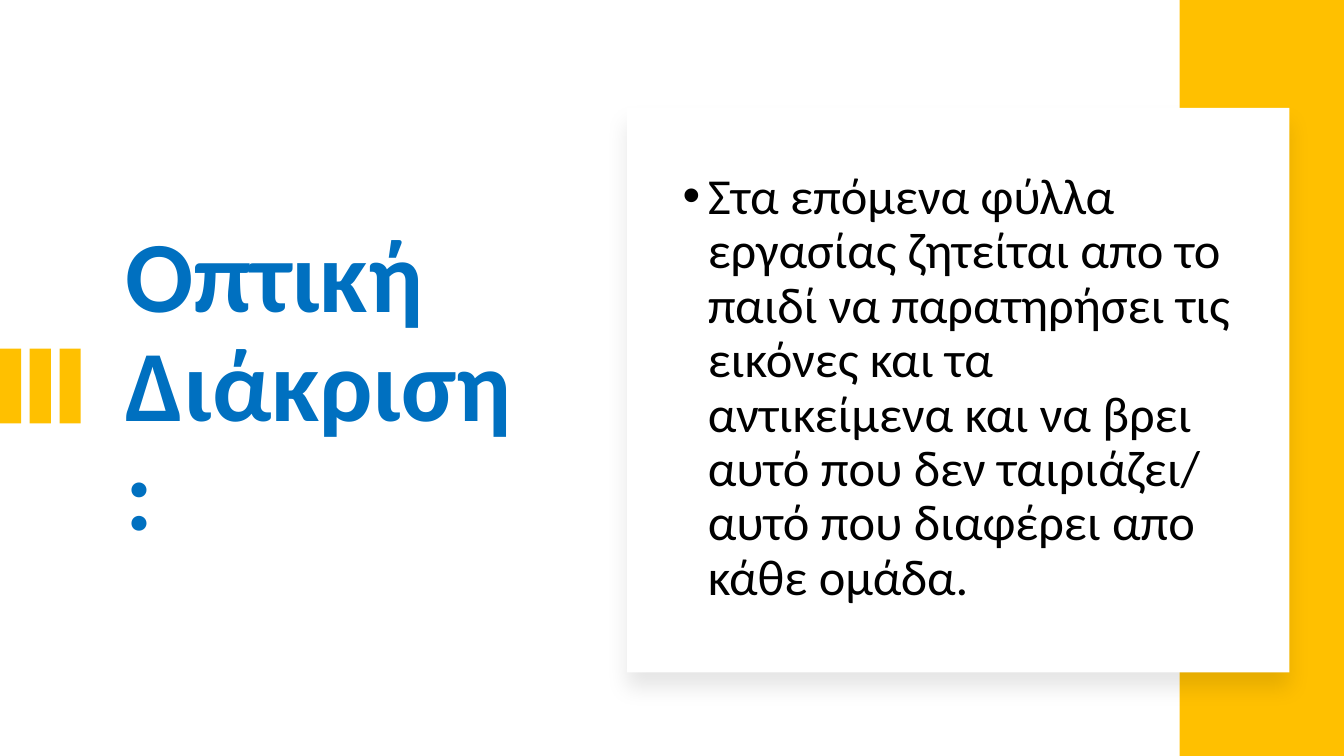
from lxml import etree
from pptx import Presentation
from pptx.dml.color import RGBColor
from pptx.enum.shapes import MSO_SHAPE
from pptx.enum.text import MSO_ANCHOR, MSO_AUTO_SIZE, PP_ALIGN
from pptx.oxml import parse_xml
from pptx.oxml.ns import nsdecls, qn
from pptx.util import Inches, Pt

COLORS = {"yellow": "FFC000", "blue": "0070C0", "white": "FFFFFF", "black": "000000"}


def add_block(shapes, left, top, width, height, color):
    block = shapes.add_shape(MSO_SHAPE.RECTANGLE, Inches(left), Inches(top),
                             Inches(width), Inches(height))
    block.shadow.inherit = False
    block.fill.solid()
    block.fill.fore_color.rgb = RGBColor.from_string(COLORS[color])
    block.line.fill.background()
    return block


def fill_placeholder(placeholder, left, width, text, size, color, bold):
    placeholder.left, placeholder.top = Inches(left), Inches(1.46)
    placeholder.width, placeholder.height = Inches(width), Inches(4.79)
    frame = placeholder.text_frame
    frame.text = text
    frame.word_wrap = True
    frame.auto_size = MSO_AUTO_SIZE.NONE
    frame.vertical_anchor = MSO_ANCHOR.MIDDLE
    paragraph = frame.paragraphs[0]
    paragraph.alignment = PP_ALIGN.LEFT
    paragraph.line_spacing = 0.9
    paragraph.space_before = Pt(0)
    font = paragraph.runs[0].font
    font.name, font.size, font.bold = "Calibri", Pt(size), bold
    font.color.rgb = RGBColor.from_string(COLORS[color])
    return paragraph


presentation = Presentation()
presentation.slide_width = Inches(13.33)
presentation.slide_height = Inches(7.5)
slide = presentation.slides.add_slide(presentation.slide_layouts[1])

# Heading
heading = slide.shapes.title
fill_placeholder(heading, 1.14, 4.26, "Οπτική Διάκριση:", 72, "blue", True)

# Three accent bars at the left edge
accent_bars = slide.shapes.add_group_shape()
for column in range(3):
    add_block(accent_bars.shapes, column * 0.295, 3.46, 0.21, 0.74, "yellow")

# Yellow band and white card with a soft shadow
add_block(slide.shapes, 11.7, 0, 1.63, 7.5, "yellow")
card = add_block(slide.shapes, 6.22, 1.07, 6.57, 5.6, "white")
card_effects = card.element.spPr.find(qn("a:effectLst"))
card_effects.append(parse_xml(
    f'<a:outerShdw {nsdecls("a")} blurRad="{Pt(15)}" dist="{Pt(11)}" dir="5400000" '
    f'algn="t" rotWithShape="0"><a:srgbClr val="{COLORS["black"]}">'
    '<a:alpha val="10000"/></a:srgbClr></a:outerShdw>'))

# Instructions, in front of the card
instructions = slide.placeholders[1]
card.element.addnext(instructions.element)
instruction = fill_placeholder(
    instructions, 6.67, 5.75,
    "Στα επόμενα φύλλα εργασίας ζητείται απο το παιδί να παρατηρήσει τις εικόνες "
    "και τα αντικείμενα και να βρει αυτό που δεν ταιριάζει/ αυτό που διαφέρει απο "
    "κάθε ομάδα.", 36, "black", False)
bullet_properties = instruction.runs[0].font and instruction._p.get_or_add_pPr()
bullet_properties.set("marL", str(Inches(0.25)))
bullet_properties.set("indent", str(Inches(-0.25)))
etree.SubElement(bullet_properties, qn("a:buFont")).set("typeface", "Arial")
etree.SubElement(bullet_properties, qn("a:buChar")).set("char", "•")

presentation.save("out.pptx")
